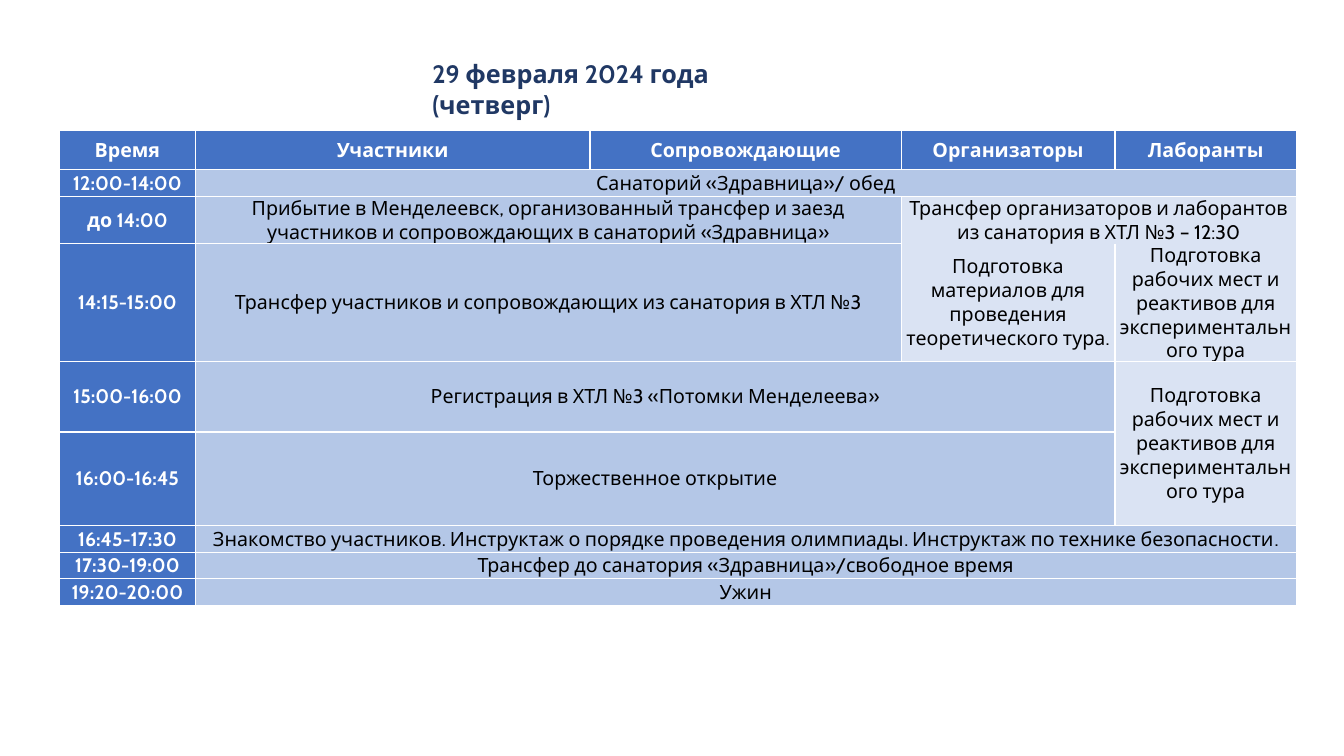
from dataclasses import dataclass

import pptx
import pptx.dml.color
import pptx.enum.text
import pptx.util
from pptx.util import Cm

FONT = "Cabin"
WHITE, BLACK, NAVY = "FFFFFF", "000000", "203864"
HEADER_BLUE, EVENT_BLUE, STAFF_BLUE = "4472C4", "B4C7E7", "DAE3F3"

COLUMN_WIDTHS = [3.42, 9.95, 7.84, 5.39, 4.57]
ROW_HEIGHTS = [1.0, 0.67, 1.18, 0, 2.97, 1.78, 2.36, 0.67, 0.67, 0.67]
HEADINGS = ["Время", "Участники", "Сопровождающие", "Организаторы", "Лаборанты"]
LAB_PREPARATION = "Подготовка рабочих мест и реактивов для экспериментального тура"


@dataclass
class Entry:
    row: int
    column: int
    text: str
    rows: int = 1
    columns: int = 1
    fill: str = EVENT_BLUE
    color: str = BLACK
    bold: bool = False


def heading(row: int, column: int, text: str, rows: int = 1) -> Entry:
    return Entry(row, column, text, rows, fill=HEADER_BLUE, color=WHITE, bold=True)


def staff_task(row: int, column: int, text: str, rows: int = 1, columns: int = 1) -> Entry:
    return Entry(row, column, text, rows, columns, fill=STAFF_BLUE)


ENTRIES = [heading(0, column, text) for column, text in enumerate(HEADINGS)] + [
    heading(1, 0, "12:00-14:00"),
    Entry(1, 1, "Санаторий «Здравница»/ обед", columns=4),
    heading(2, 0, "до 14:00", rows=2),
    Entry(2, 1, "Прибытие в Менделеевск, организованный трансфер и заезд "
          "участников и сопровождающих в санаторий «Здравница»", rows=2, columns=2),
    staff_task(2, 3, "Трансфер организаторов и лаборантов из санатория в ХТЛ №3 – 12:30", columns=2),
    staff_task(3, 3, "Подготовка материалов для проведения теоретического тура.", rows=2),
    staff_task(3, 4, LAB_PREPARATION, rows=2),
    heading(4, 0, "14:15-15:00"),
    Entry(4, 1, "Трансфер участников и сопровождающих из санатория в ХТЛ №3", columns=2),
    heading(5, 0, "15:00-16:00"),
    Entry(5, 1, "Регистрация в ХТЛ №3 «Потомки Менделеева»", columns=3),
    staff_task(5, 4, LAB_PREPARATION, rows=2),
    heading(6, 0, "16:00-16:45"),
    Entry(6, 1, "Торжественное открытие", columns=3),
    heading(7, 0, "16:45-17:30"),
    Entry(7, 1, "Знакомство участников. Инструктаж о порядке проведения олимпиады. "
          "Инструктаж по технике безопасности.", columns=4),
    heading(8, 0, "17:30-19:00"),
    Entry(8, 1, "Трансфер до санатория «Здравница»/свободное время", columns=4),
    heading(9, 0, "19:20-20:00"),
    Entry(9, 1, "Ужин", columns=4),
]


def rgb(value: str) -> pptx.dml.color.RGBColor:
    return pptx.dml.color.RGBColor.from_string(value)


def format_text(para, size: float, color: str, bold: bool, align) -> None:
    para.alignment = align
    for font in [para.font] + [span.font for span in para.runs]:
        font.name = FONT
        font.size = pptx.util.Pt(size)
        font.bold = bold
        font.color.rgb = rgb(color)


def place_title(page) -> None:
    box = page.shapes.title
    box.left, box.top, box.width, box.height = Cm(10.64), Cm(1.35), Cm(9.47), Cm(1.02)
    frame = box.text_frame
    frame.text = "29 февраля 2024 года (четверг)"
    frame.word_wrap = True
    frame.auto_size = pptx.enum.text.MSO_AUTO_SIZE.SHAPE_TO_FIT_TEXT
    frame.vertical_anchor = pptx.enum.text.MSO_ANCHOR.TOP
    format_text(frame.paragraphs[0], 18, NAVY, True, pptx.enum.text.PP_ALIGN.LEFT)


def fill_entry(table, entry: Entry) -> None:
    cell = table.cell(entry.row, entry.column)
    if entry.rows * entry.columns > 1:
        cell.merge(table.cell(entry.row + entry.rows - 1, entry.column + entry.columns - 1))
    cell.text = entry.text
    cell.fill.solid()
    cell.fill.fore_color.rgb = rgb(entry.fill)
    format_text(cell.text_frame.paragraphs[0], 14, entry.color, entry.bold,
                pptx.enum.text.PP_ALIGN.CENTER)


def add_schedule(page) -> None:
    table = page.shapes.add_table(
        len(ROW_HEIGHTS), len(COLUMN_WIDTHS), Cm(1.5), Cm(3.28),
        Cm(sum(COLUMN_WIDTHS)), Cm(sum(ROW_HEIGHTS))).table
    table.horz_banding = False
    for column, width in zip(table.columns, COLUMN_WIDTHS):
        column.width = Cm(width)
    for row, height in zip(table.rows, ROW_HEIGHTS):
        row.height = Cm(height)
    for cell in table.iter_cells():
        cell.margin_left = cell.margin_right = Cm(0.1)
        cell.margin_top = cell.margin_bottom = 0
        cell.vertical_anchor = pptx.enum.text.MSO_ANCHOR.MIDDLE
    for entry in ENTRIES:
        fill_entry(table, entry)


def main() -> None:
    deck = pptx.Presentation()
    deck.slide_width, deck.slide_height = Cm(33.87), Cm(19.05)
    page = deck.slides.add_slide(deck.slide_layouts.get_by_name("Title Only"))
    place_title(page)
    add_schedule(page)
    deck.save("out.pptx")


if __name__ == "__main__":
    main()
